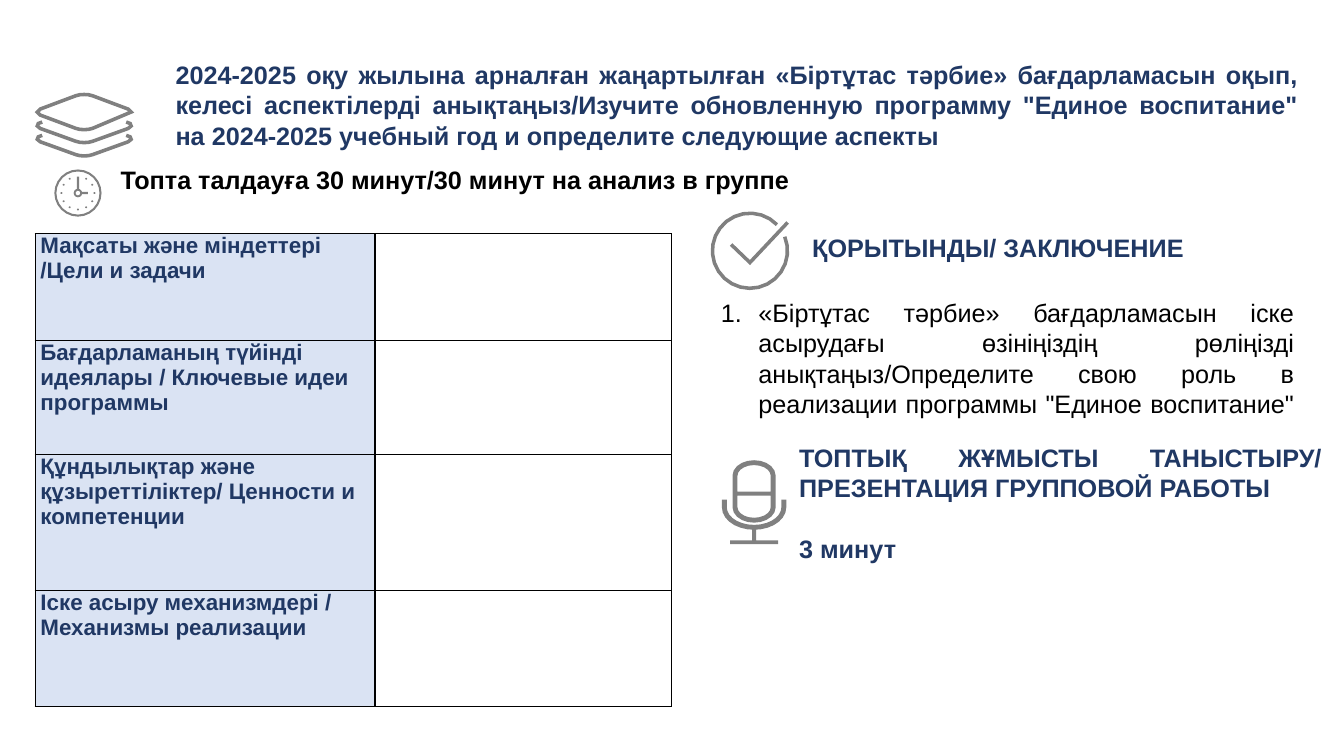
from math import cos, radians, sin

from lxml.etree import SubElement
from pptx import Presentation
from pptx.dml.color import RGBColor as Rgb
from pptx.enum.text import MSO_ANCHOR as Anchor, MSO_AUTO_SIZE as Auto, PP_ALIGN as Align
from pptx.oxml import parse_xml
from pptx.oxml.ns import nsdecls, qn
from pptx.util import Cm, Pt

HUES = {"navy": "203864", "black": "000000", "gray": "808080",
        "pale": "DAE3F3", "white": "FFFFFF"}
ROWS = [
    ("Мақсаты және міндеттері /Цели и задачи", 2.69),
    ("Бағдарламаның түйінді идеялары / Ключевые идеи программы", 2.87),
    ("Құндылықтар және құзыреттіліктер/ Ценности и компетенции", 3.43),
    ("Іске асыру механизмдері / Механизмы реализации", 2.92),
]


def hue(name):
    """Return the named colour."""
    return Rgb.from_string(HUES[name])


def write(frame, text, size=18, color="navy", bold=True, align=Align.LEFT,
          before=0, more=False):
    """Write one formatted paragraph into a text frame and return it."""
    para = frame.add_paragraph() if more else frame.paragraphs[0]
    para.alignment, para.line_spacing = align, 1.0
    para.space_before, para.space_after = Pt(before), Pt(0)
    run = para.add_run()
    run.text = text
    font = run.font
    font.name, font.size, font.bold = "Arial", Pt(size), bold
    font.color.rgb = hue(color)
    return para


def place(shape, box):
    """Move a text shape to its box and return its frame, set to wrap from the top."""
    shape.left, shape.top, shape.width, shape.height = map(Cm, box)
    frame = shape.text_frame
    frame.word_wrap, frame.auto_size = True, Auto.NONE
    frame.vertical_anchor = Anchor.TOP
    return frame


def label(slide, box):
    """Add a text box and return its frame."""
    return place(slide.shapes.add_textbox(*map(Cm, box)), box)


def arc(x, y, wide, high, start=0, end=360, steps=24):
    """List points along an ellipse, leaving out the last one of a full turn."""
    count = steps if end - start == 360 else steps + 1
    turns = [radians(start + (end - start) * i / steps) for i in range(count)]
    return [(x + wide * cos(t), y + high * sin(t)) for t in turns]


def band(dots, width, close=False):
    """Return the outlines of a line of the given width through the points."""
    spots = [complex(*dot) for dot in dots]
    ends = spots[1:] + spots[:1]
    norms = [1j * (b - a) / abs(b - a) for a, b in zip(spots, ends)]
    if not close:
        norms[-1] = norms[-2]
    olds = norms[-1:] + norms[:-1]
    if not close:
        olds[0] = norms[0]
    sides = ([], [])
    for spot, old, new in zip(spots, olds, norms):
        step = width / 2 * (old + new) / (1 + (old * new.conjugate()).real)
        for side, point in zip(sides, (spot + step, spot - step)):
            side.append((point.real, point.imag))
    return list(sides) if close else [sides[0] + sides[1][::-1]]


def draw(slide, box, rings):
    """Fill outlines given in percent of the icon width as one gray shape."""
    left, top, wide = box
    pen = None
    for ring in rings:
        spots = [(Cm(left + x * wide / 100), Cm(top + y * wide / 100)) for x, y in ring]
        if pen:
            pen.move_to(*spots[0])
        else:
            pen = slide.shapes.build_freeform(*spots[0])
        pen.add_line_segments(spots[1:], close=True)
    icon = pen.convert_to_shape()
    icon.shadow.inherit = False
    icon.fill.solid()
    icon.fill.fore_color.rgb = hue("gray")
    icon.line.fill.background()


def stack(slide, box):
    """Draw three stacked sheets."""
    half = [(5, 22.5), (2, 19.5), (5, 16.5), (41, 3), (45, 2), (49.5, 1.7)]
    rim = half + [(99 - x, y) for x, y in half[-2::-1]]
    base = [(x, 39 - y) for x, y in rim[2:-2]]
    draw(slide, box, band(rim[:-1] + base[-2:0:-1], 3.6, close=True))
    low = [(7, 29.5), (3, 31), (2, 33.5), (5, 36), (41, 49), (45, 50), (49.5, 50.3)]
    edge = low + [(99 - x, y) for x, y in low[-2::-1]]
    for drop in (0, 13.5):
        draw(slide, box, band([(x, y + drop) for x, y in edge], 3.6))


def clock(slide, box):
    """Draw a clock with hour dots and two hands."""
    rings = band(arc(50, 50, 47.8, 47.8), 4.3, close=True)
    rings += band(arc(50, 50, 7, 7, steps=12), 4, close=True)
    rings += band([(50, 15), (50, 41)], 4.5) + band([(59, 50), (71, 50)], 4.5)
    for hour in range(1, 12):
        turn = radians(30 * hour)
        rings.append(arc(50 + 35 * sin(turn), 50 - 35 * cos(turn), 2.2, 2.2, steps=6))
    draw(slide, box, rings)


def check(slide, box):
    """Draw a tick in an open ring."""
    rings = band(arc(50, 50, 47.8, 47.8, -22, 316), 4.5)
    draw(slide, box, rings + band([(26, 42), (50, 65), (98, 14)], 4.5))


def mic(slide, box):
    """Draw a microphone on a stand."""
    body = arc(50, 23, 29.5, 20, 180, 360, 10) + arc(50, 72, 29.5, 20, 0, 180, 10)
    yoke = [(96, 60)] + arc(50, 72, 46, 31, 0, 180, 14) + [(4, 60)]
    rings = band(body, 7.5, close=True) + band(yoke, 7.5)
    for bar in ([(24.3, 51), (75.7, 51)], [(50, 107), (50, 123)], [(13, 126), (87, 126)]):
        rings += band(bar, 6)
    draw(slide, box, rings)


def head(slide, box):
    """Place the stack icon and the task as the title."""
    left, top, wide, high = box
    stack(slide, (left, top + 0.97, 2.49))
    frame = place(slide.shapes.title, (left + 3.28, top, wide - 3.28, high))
    write(frame, "2024-2025 оқу жылына арналған жаңартылған «Біртұтас тәрбие» "
          "бағдарламасын оқып, келесі аспектілерді анықтаңыз/Изучите обновленную "
          "программу \"Единое воспитание\" на 2024-2025 учебный год и определите "
          "следующие аспекты", align=Align.JUSTIFY)


def timer(slide, box):
    """Place the clock and the time limit."""
    left, top, wide, high = box
    clock(slide, (left, top + 0.26, 1.19))
    write(label(slide, (left + 1.42, top, wide - 1.42, high)),
          "Топта талдауға 30 минут/30 минут на анализ в группе", color="black")


def frame_cell(cell):
    """Give a cell thin black borders."""
    for i, side in enumerate("LRTB"):
        cell.get_or_add_tcPr().insert(i, parse_xml(
            f'<a:ln{side} {nsdecls("a")} w="12700"><a:solidFill>'
            f'<a:srgbClr val="{HUES["black"]}"/></a:solidFill></a:ln{side}>'))


def grid(slide, box):
    """Place the table of aspects with an empty answer column."""
    table = slide.shapes.add_table(len(ROWS), 2, *map(Cm, box)).table
    table.first_row = table.horz_banding = False
    for col, wide in zip(table.columns, (8.56, box[2] - 8.56)):
        col.width = Cm(wide)
    for i, (text, high) in enumerate(ROWS):
        table.rows[i].height = Cm(high)
        for cell, fill in zip(table.rows[i].cells, ("pale", "white")):
            cell.fill.solid()
            cell.fill.fore_color.rgb = hue(fill)
            cell.margin_left = cell.margin_right = Cm(0.13)
            cell.margin_top = cell.margin_bottom = 0
            frame_cell(cell._tc)
        write(table.cell(i, 0).text_frame, text, size=16)


def result(slide, box):
    """Place the conclusion heading and its numbered point."""
    left, top, wide, high = box
    check(slide, (left, top, 1.98))
    write(label(slide, (left + 2.31, top + 0.41, 12.09, 1.8)), "ҚОРЫТЫНДЫ/ ЗАКЛЮЧЕНИЕ")
    frame = place(slide.placeholders[1], (left, top + 2.04, wide, high - 2.04))
    para = write(frame, "«Біртұтас тәрбие» бағдарламасын іске асырудағы өзініңіздің "
                 "рөліңізді анықтаңыз/Определите свою роль в реализации программы "
                 "\"Единое воспитание\" ", color="black", bold=False, align=Align.JUSTIFY)
    props = para._p.get_or_add_pPr()
    props.set("marL", str(Cm(0.95)))
    props.set("indent", str(-Cm(0.95)))
    SubElement(props, qn("a:buFont"), typeface="+mj-lt")
    SubElement(props, qn("a:buAutoNum"), type="arabicPeriod")


def talk(slide, box):
    """Place the microphone and the call to present."""
    left, top, wide, high = box
    mic(slide, (left, top + 0.59, 1.63))
    frame = label(slide, (left + 1.7, top, wide - 1.7, high))
    write(frame, "ТОПТЫҚ ЖҰМЫСТЫ ТАНЫСТЫРУ/ ПРЕЗЕНТАЦИЯ ГРУППОВОЙ РАБОТЫ",
          align=Align.JUSTIFY)
    write(frame, "3 минут", before=21.6, more=True)


def main():
    """Build and save the slide."""
    deck = Presentation()
    deck.slide_width, deck.slide_height = Cm(33.87), Cm(19.05)
    slide = deck.slides.add_slide(deck.slide_layouts[1])
    head(slide, (0.89, 1.37, 32.08, 2.57))
    timer(slide, (1.37, 4.01, 22.4, 1.02))
    grid(slide, (0.89, 5.89, 16.03, 11.91))
    result(slide, (17.91, 5.33, 14.96, 6.03))
    talk(slide, (18.19, 11.02, 15.37, 4.11))
    deck.save("out.pptx")


if __name__ == "__main__":
    main()
